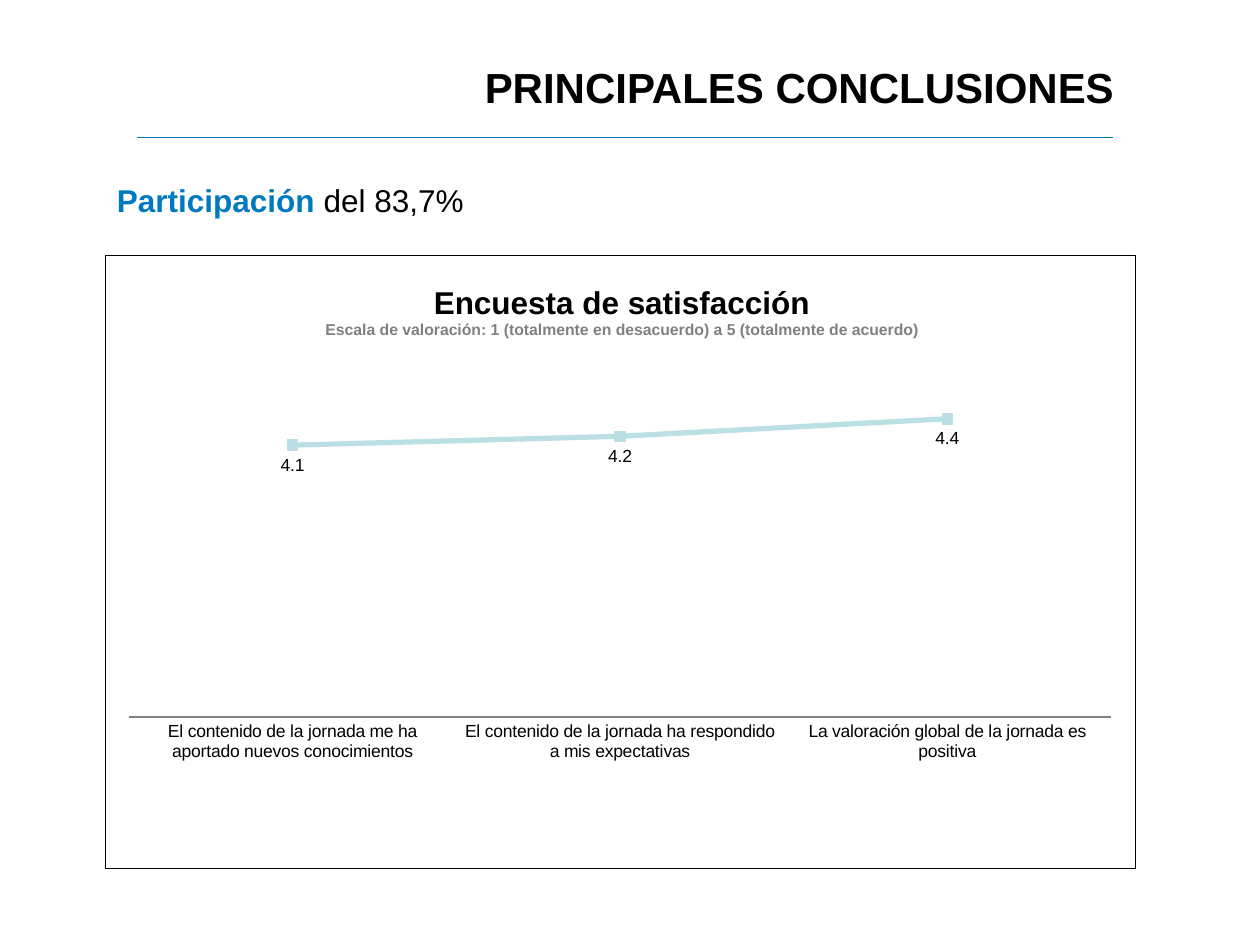
from lxml import etree
from pptx import Presentation
from pptx.chart.data import CategoryChartData
from pptx.dml.color import RGBColor
from pptx.enum.chart import XL_CHART_TYPE, XL_LABEL_POSITION, XL_MARKER_STYLE, XL_TICK_MARK
from pptx.enum.shapes import MSO_CONNECTOR
from pptx.enum.text import PP_ALIGN
from pptx.oxml import parse_xml
from pptx.oxml.ns import nsdecls, qn
from pptx.util import Inches, Pt

LINE = XL_CHART_TYPE.LINE_MARKERS
BELOW = XL_LABEL_POSITION.BELOW
SQUARE = XL_MARKER_STYLE.SQUARE
NO_TICK = XL_TICK_MARK.NONE
STRAIGHT = MSO_CONNECTOR.STRAIGHT
LEFT, RIGHT, CENTER = PP_ALIGN.LEFT, PP_ALIGN.RIGHT, PP_ALIGN.CENTER
COLORS = {"blue": "007ABE", "black": "000000", "gray": "808080", "aqua": "BBE0E3"}


def paint(name):
    return RGBColor.from_string(COLORS[name])


def write(para, text, size=18, color="black", bold=False, align=LEFT):
    para.alignment = align
    run = para.add_run()
    run.text = text
    font = run.font
    font.name, font.size, font.bold = "Arial", Pt(size), bold
    font.color.rgb = paint(color)


deck = Presentation()
deck.slide_width, deck.slide_height = Inches(10), Inches(7.5)
slide = deck.slides.add_slide(deck.slide_layouts[6])
shapes = slide.shapes

rule = shapes.add_connector(STRAIGHT, Inches(1.09), Inches(1.09), Inches(8.83), Inches(1.09))
rule.line.color.rgb = paint("blue")
rule.line.width = Pt(0.75)
etree.SubElement(rule.element.spPr, qn("a:effectLst"))

data = CategoryChartData(number_format="0.0")
data.categories = [
    "El contenido de la jornada me ha aportado nuevos conocimientos",
    "El contenido de la jornada ha respondido a mis expectativas",
    "La valoración global de la jornada es positiva",
]
data.add_series("Series 1", [4.1, 4.2, 4.4])
frame = shapes.add_chart(LINE, Inches(0.83), Inches(2.02), Inches(8.19), Inches(4.88), data)
chart = frame.chart
chart.has_legend = False
chart.font.name, chart.font.size = "Arial", Pt(10)
chart.font.color.rgb = paint("black")

chart.has_title = True
title = chart.chart_title
title.include_in_layout = False
head = title.text_frame
write(head.paragraphs[0], "Encuesta de satisfacción", bold=True, align=CENTER)
write(head.add_paragraph(), "Escala de valoración: 1 (totalmente en desacuerdo) a 5 (totalmente de acuerdo)",
      size=9, color="gray", bold=True, align=CENTER)

cats = chart.category_axis
cats.major_tick_mark = cats.minor_tick_mark = NO_TICK
cats.format.line.color.rgb = paint("gray")
cats.format.line.width = Pt(0.75)
scale = chart.value_axis
scale.visible = False
scale.has_major_gridlines = False
scale.minimum_scale, scale.maximum_scale, scale.major_unit = 1, 5, 1

plot = chart.plots[0]
plot.vary_by_categories = False
line = plot.series[0]
line.smooth = False
line.format.line.color.rgb = paint("aqua")
line.format.line.width = Pt(3)
mark = line.marker
mark.style, mark.size = SQUARE, 6
mark.format.fill.solid()
mark.format.fill.fore_color.rgb = paint("aqua")
mark.format.line.color.rgb = paint("aqua")
tags = line.data_labels
tags.show_value = True
tags.position = BELOW
tags.number_format, tags.number_format_is_linked = "0.0", False
tags.font.name, tags.font.size = "Arial", Pt(10)
tags.font.color.rgb = paint("black")

root = plot._element.getroottree().getroot()
body = root.find(qn("c:chart"))
area = body.find(qn("c:plotArea"))
name = body.find(qn("c:title"))
for part, spot, inner, sizes in (
    (area, 0, '<c:layoutTarget val="inner"/>', {"x": 0.023, "y": 0.181, "w": 0.953, "h": 0.572}),
    (name, 1, "", {"x": 0.21, "y": 0.04}),
):
    for old in part.findall(qn("c:layout")):
        part.remove(old)
    modes = "".join(f'<c:{key}Mode val="edge"/>' for key in "xy")
    vals = "".join(f'<c:{key} val="{val}"/>' for key, val in sizes.items())
    part.insert(spot, parse_xml(
        f'<c:layout {nsdecls("c")}><c:manualLayout>{inner}{modes}{vals}</c:manualLayout></c:layout>'))
body.addnext(parse_xml(
    f'<c:spPr {nsdecls("c", "a")}><a:noFill/><a:ln w="{Pt(0.75)}"><a:solidFill>'
    f'<a:srgbClr val="{COLORS["black"]}"/></a:solidFill></a:ln></c:spPr>'))

box = shapes.add_textbox(Inches(3.54), Inches(0.44), Inches(5.4), Inches(0.79)).text_frame
box.word_wrap = True
write(box.paragraphs[0], "PRINCIPALES CONCLUSIONES", size=24, bold=True, align=RIGHT)

box = shapes.add_textbox(Inches(0.83), Inches(1.39), Inches(5.28), Inches(0.4)).text_frame
box.word_wrap = True
write(box.paragraphs[0], "Participación", color="blue", bold=True)
write(box.paragraphs[0], " del 83,7%")

deck.save("out.pptx")
